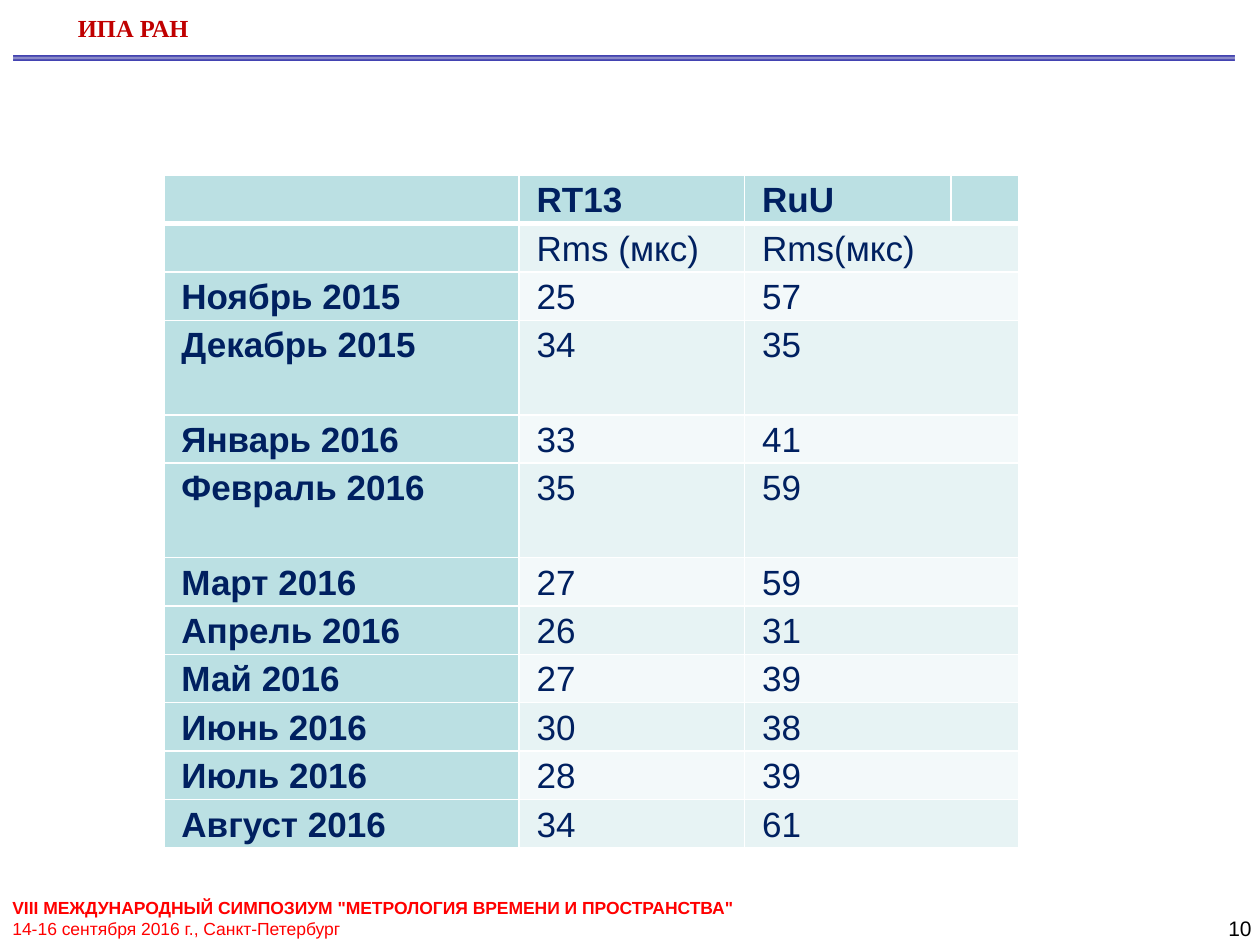
import dataclasses

import lxml.etree
import pptx
import pptx.dml.color
import pptx.enum.shapes
import pptx.oxml.ns
import pptx.util

Inches = pptx.util.Inches
Pt = pptx.util.Pt
qn = pptx.oxml.ns.qn


@dataclasses.dataclass(frozen=True)
class Theme:
    sans: str = "Arial"
    serif: str = "Times New Roman"
    brand: str = "C00000"
    footer: str = "FF0000"
    black: str = "000000"
    navy: str = "002060"
    white: str = "FFFFFF"
    heading_fill: str = "BBE0E3"
    bands: tuple = ("F3F9FA", "E7F3F4")
    rule_edge: str = "000099"
    rule_middle: str = "32329C"
    brand_size: int = 14
    number_size: int = 12
    footer_size: int = 10
    table_size: int = 20


THEME = Theme()

MONTHS = [
    ("Ноябрь 2015", 25, 57),
    ("Декабрь 2015", 34, 35),
    ("Январь 2016", 33, 41),
    ("Февраль 2016", 35, 59),
    ("Март 2016", 27, 59),
    ("Апрель 2016", 26, 31),
    ("Май 2016", 27, 39),
    ("Июнь 2016", 30, 38),
    ("Июль 2016", 28, 39),
    ("Август 2016", 34, 61),
]
TABLE_ROWS = [("", "RT13", "RuU"), ("", "Rms (мкс)", "Rms(мкс)")] + MONTHS
COLUMN_WIDTHS = (2.82, 1.79, 1.64, 0.54)
TALL_ROWS = ("Декабрь 2015", "Февраль 2016")
TALL_HEIGHT = 0.75


def rgb(color):
    return pptx.dml.color.RGBColor.from_string(color)


def write(para, text, *, size, color, font=THEME.sans, bold=False, spacing=None):
    if spacing:
        para.line_spacing = spacing
    span = para.add_run()
    span.text = text
    span.font.name = font
    span.font.size = Pt(size)
    span.font.bold = bold
    span.font.color.rgb = rgb(color)


def add_text_frame(page, left, top, width, height):
    box = page.shapes.add_textbox(Inches(left), Inches(top), Inches(width), Inches(height))
    box.text_frame.word_wrap = True
    return box.text_frame


def fill_rule(bar):
    bar.fill.gradient()
    bar.fill.gradient_angle = 90
    stops = bar._element.spPr.find(".//" + qn("a:gsLst"))
    for stop in list(stops):
        stops.remove(stop)
    for position, color, opacity in (
        (0, THEME.rule_edge, 100),
        (50, THEME.rule_middle, 44),
        (100, THEME.rule_edge, 100),
    ):
        stop = lxml.etree.SubElement(stops, qn("a:gs"), pos=str(position * 1000))
        tint = lxml.etree.SubElement(stop, qn("a:srgbClr"), val=color)
        if opacity < 100:
            lxml.etree.SubElement(tint, qn("a:alpha"), val=str(opacity * 1000))


def add_header(page, left, top, width):
    frame = add_text_frame(page, left + 0.41, top, 5.24, 0.29)
    write(frame.paragraphs[0], "ИПА РАН", size=THEME.brand_size, color=THEME.brand,
          font=THEME.serif, bold=True, spacing=0.8)
    bar = page.shapes.add_shape(pptx.enum.shapes.MSO_SHAPE.RECTANGLE, Inches(left),
                                Inches(top + 0.34), Inches(width), Inches(0.04))
    bar.shadow.inherit = False
    bar.line.fill.background()
    fill_rule(bar)


def add_footer(page, left, top, width, height):
    frame = add_text_frame(page, left, top, width, height)
    write(frame.paragraphs[0], 'VIII МЕЖДУНАРОДНЫЙ СИМПОЗИУМ "МЕТРОЛОГИЯ ВРЕМЕНИ И ПРОСТРАНСТВА"',
          size=THEME.footer_size, color=THEME.footer, bold=True)
    write(frame.add_paragraph(), "14-16 сентября 2016 г., Санкт-Петербург",
          size=THEME.footer_size, color=THEME.footer)


def add_page_number(page, left, top, width, height):
    frame = add_text_frame(page, left, top, width, height)
    write(frame.paragraphs[0], "10", size=THEME.number_size, color=THEME.black)


def add_borders(cell, widths):
    properties = cell._tc.get_or_add_tcPr()
    for side, width in widths.items():
        line = lxml.etree.SubElement(properties, qn("a:ln" + side), w=str(Pt(width)))
        solid = lxml.etree.SubElement(line, qn("a:solidFill"))
        lxml.etree.SubElement(solid, qn("a:srgbClr"), val=THEME.white)


def style_cell(cell, row, column):
    add_borders(cell, {"L": 1, "R": 1, "T": 3 if row == 1 else 1, "B": 3 if row == 0 else 1})
    cell.margin_left = cell.margin_right = Inches(0.14)
    cell.margin_top = cell.margin_bottom = 0
    heading = row == 0 or column == 0
    cell.fill.solid()
    cell.fill.fore_color.rgb = rgb(THEME.heading_fill if heading else THEME.bands[row % 2])


def add_results_table(page, left, top, width, height):
    table = page.shapes.add_table(len(TABLE_ROWS), len(COLUMN_WIDTHS), Inches(left), Inches(top),
                                  Inches(width), Inches(height)).table
    table.first_row = table.horz_banding = False
    for column, column_width in zip(table.columns, COLUMN_WIDTHS):
        column.width = Inches(column_width)
    tall_total = TALL_HEIGHT * len(TALL_ROWS)
    row_height = (height - tall_total) / (len(TABLE_ROWS) - len(TALL_ROWS))
    for row, values in enumerate(TABLE_ROWS):
        table.rows[row].height = Inches(TALL_HEIGHT if values[0] in TALL_ROWS else row_height)
        for column in range(len(COLUMN_WIDTHS)):
            style_cell(table.cell(row, column), row, column)
        if row > 0:
            table.cell(row, 2).merge(table.cell(row, 3))
        for column, value in enumerate(values):
            if value != "":
                write(table.cell(row, column).text_frame.paragraphs[0], str(value),
                      size=THEME.table_size, color=THEME.navy,
                      bold=row == 0 or column == 0, spacing=1.15)


def main():
    deck = pptx.Presentation()
    deck.slide_width = Inches(10)
    deck.slide_height = Inches(7.5)
    page = deck.slides.add_slide(deck.slide_layouts[6])
    add_header(page, 0.11, 0.1, 9.69)
    add_page_number(page, 9.65, 7.22, 0.51, 0.3)
    add_footer(page, 0, 7.07, 6.73, 0.43)
    add_results_table(page, 1.3, 1.39, 6.8, 5.33)
    deck.save("out.pptx")


if __name__ == "__main__":
    main()
